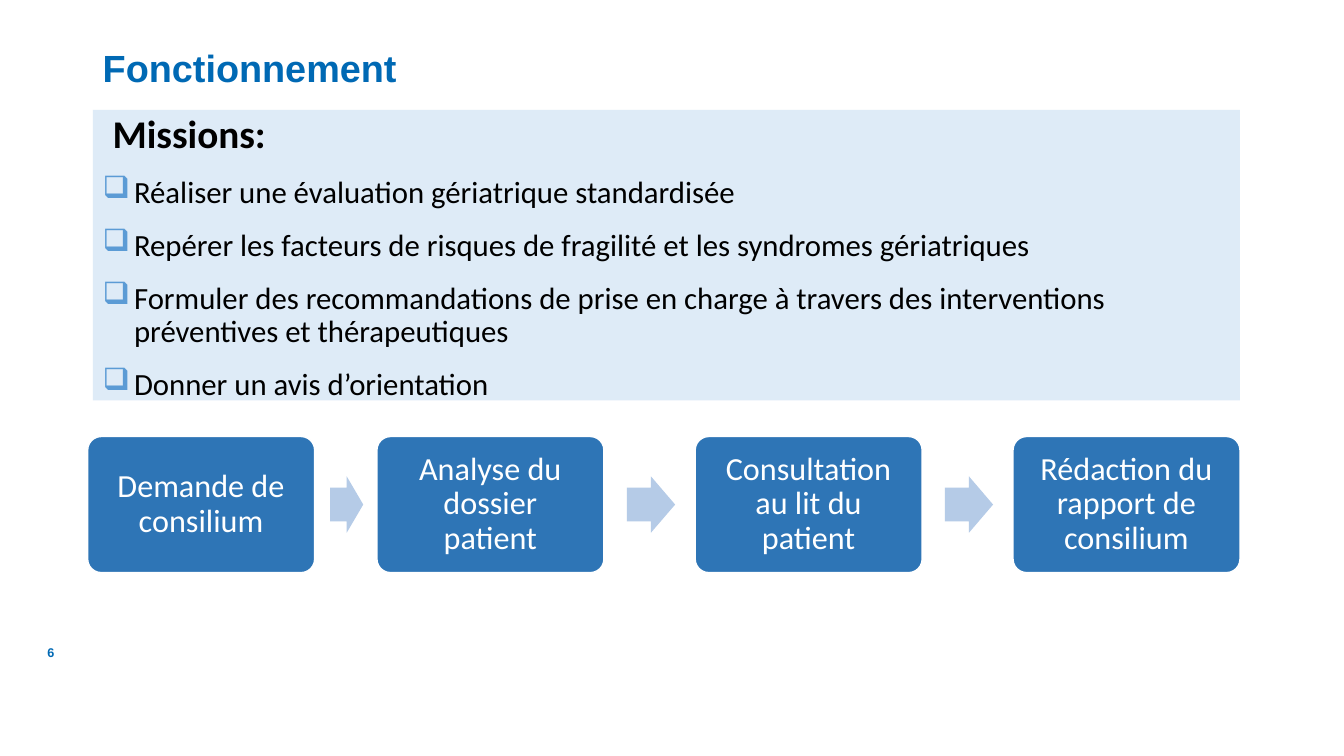
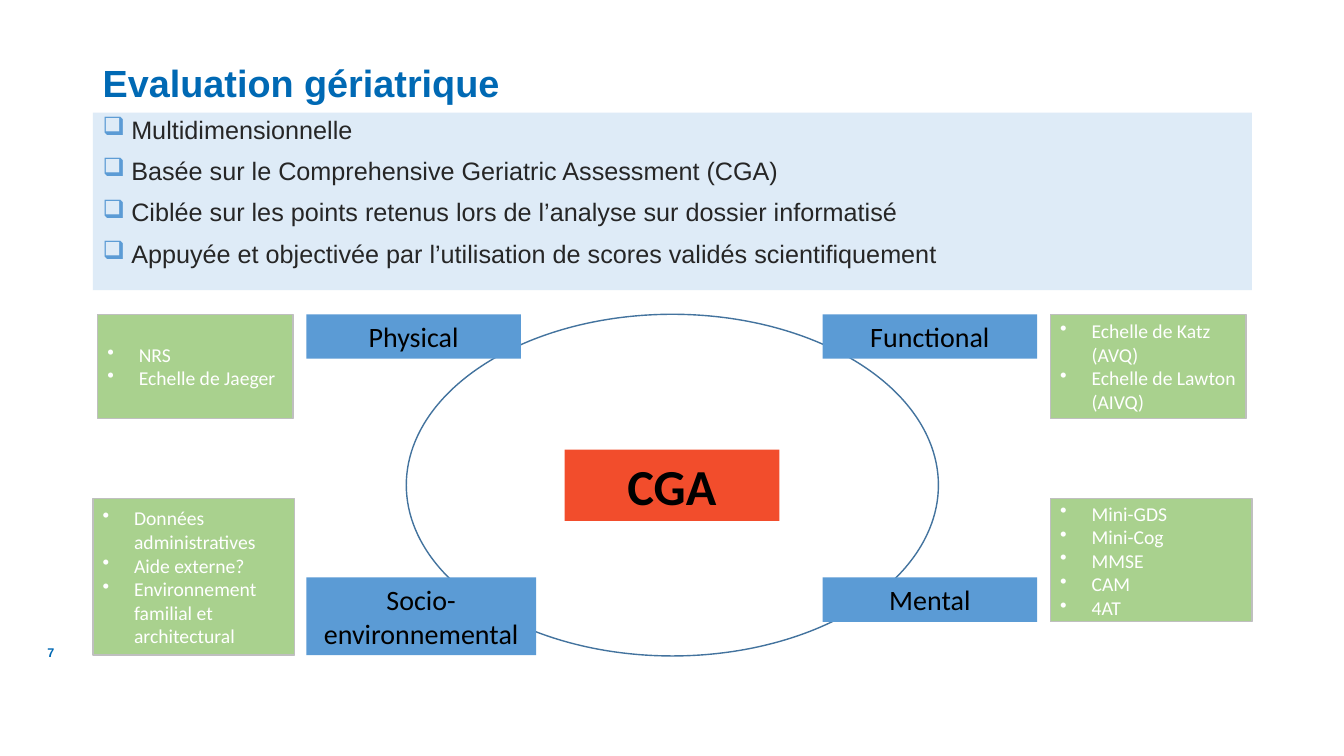
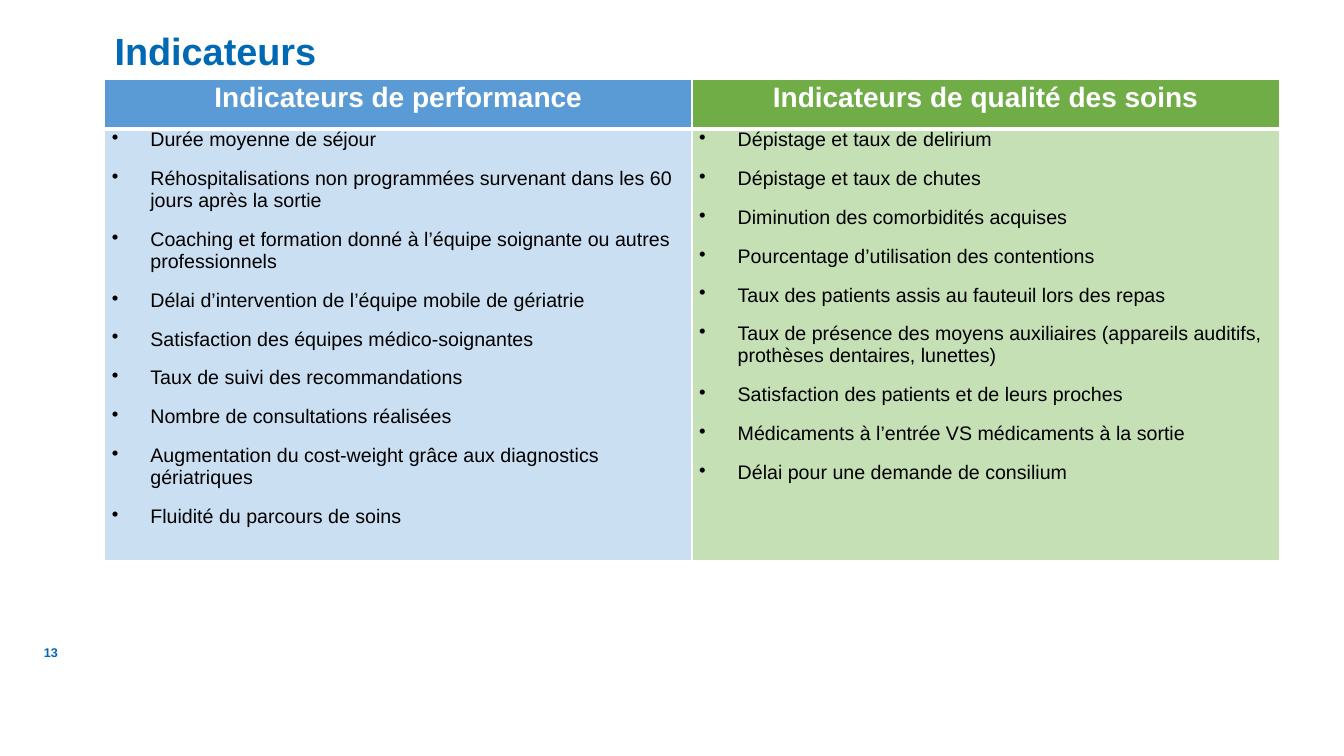
from lxml.etree import SubElement
from pptx import Presentation
from pptx.dml.color import RGBColor
from pptx.enum.shapes import MSO_SHAPE as Shape
from pptx.enum.text import MSO_ANCHOR as Anchor, PP_ALIGN as Align
from pptx.oxml.ns import qn
from pptx.util import Cm, Pt

COLORS = {
    "title": "0069B4", "panel": "DEEBF7", "accent": "5B9BD5",
    "step": "2E75B6", "arrow": "B5CBE7", "ring": "43739E",
    "core": "F24D2C", "scale": "A9D18E", "scale_line": "BFBFBF",
    "quality": "70AD47", "performance_body": "CADFF2", "quality_body": "C5E0B4",
    "text": "262626", "black": "000000", "white": "FFFFFF",
}

# Content: positions and sizes in centimetres
MISSIONS = [
    "Réaliser une évaluation gériatrique standardisée",
    "Repérer les facteurs de risques de fragilité et les syndromes gériatriques",
    "Formuler des recommandations de prise en charge à travers des interventions "
    "préventives et thérapeutiques",
    "Donner un avis d’orientation",
]
STEPS = [  # left, label
    (2.21, "Demande de consilium"),
    (9.5, "Analyse du dossier patient"),
    (17.52, "Consultation au lit du patient"),
    (25.53, "Rédaction du rapport de consilium"),
]
STEP_TOP, STEP_WIDTH, STEP_HEIGHT, ARROW_HEIGHT = 11, 5.72, 3.43, 1.42

ASSESSMENT = [
    "Multidimensionnelle",
    "Basée sur le Comprehensive Geriatric Assessment (CGA)",
    "Ciblée sur les points retenus lors de l’analyse sur dossier informatisé",
    "Appuyée et objectivée par l’utilisation de scores validés scientifiquement",
]
DOMAINS = [  # label, box
    ("Physical", (7.72, 7.92, 5.41, 1.12)),
    ("Socio-environnemental", (7.72, 14.55, 5.79, 1.96)),
    ("Functional", (20.73, 7.92, 5.41, 1.12)),
    ("Mental", (20.73, 14.55, 5.41, 1.12)),
]
SCALES = [  # items, box
    (["Echelle de Katz (AVQ)", "Echelle de Lawton (AIVQ)"], (26.47, 7.92, 4.93, 2.62)),
    (["Mini-GDS", "Mini-Cog", "MMSE", "CAM", "4AT"], (26.47, 12.57, 5.08, 3.1)),
    (["NRS", "Echelle de Jaeger"], (2.46, 7.92, 4.93, 2.62)),
    (["Données administratives", "Aide externe?",
      "Environnement familial et architectural"], (2.34, 12.57, 5.08, 3.94)),
]

INDICATORS = [  # heading, heading fill, body fill, items
    ("Indicateurs de performance", "accent", "performance_body", [
        "Durée moyenne de séjour",
        "Réhospitalisations non programmées survenant dans les 60 jours après la sortie",
        "Coaching et formation donné à l’équipe soignante ou autres professionnels",
        "Délai d’intervention de l’équipe mobile de gériatrie",
        "Satisfaction des équipes médico-soignantes",
        "Taux de suivi des recommandations",
        "Nombre de consultations réalisées",
        "Augmentation du cost-weight grâce aux diagnostics gériatriques",
        "Fluidité du parcours de soins",
    ]),
    ("Indicateurs de qualité des soins", "quality", "quality_body", [
        "Dépistage et taux de delirium",
        "Dépistage et taux de chutes",
        "Diminution des comorbidités acquises",
        "Pourcentage d’utilisation des contentions",
        "Taux des patients assis au fauteuil lors des repas",
        "Taux de présence des moyens auxiliaires (appareils auditifs, "
        "prothèses dentaires, lunettes)",
        "Satisfaction des patients et de leurs proches",
        "Médicaments à l’entrée VS médicaments à la sortie",
        "Délai pour une demande de consilium",
    ]),
]


# Shared helpers
def rgb(name):
    return RGBColor.from_string(COLORS[name])


def indent(paragraph, left, first=0):
    properties = paragraph._p.get_or_add_pPr()
    properties.set("marL", str(Cm(left)))
    properties.set("indent", str(Cm(first)))
    return properties


def add_bullet(paragraph, char, hanging, color):
    properties = indent(paragraph, hanging, -hanging)
    bullet_color = SubElement(properties, qn("a:buClr"))
    SubElement(bullet_color, qn("a:srgbClr"), val=COLORS[color])
    SubElement(properties, qn("a:buChar"), char=char)


def write(frame, lines, size, color, font="Calibri", bold=False, align=Align.LEFT,
          spacing=1.0, before=0, after=0, bullet=None, append=False):
    """Write one paragraph per line; bullet is (char, hanging indent, colour)."""
    frame.word_wrap = True
    for index, line in enumerate(lines):
        first = index == 0 and not append
        paragraph = frame.paragraphs[0] if first else frame.add_paragraph()
        paragraph.text = line
        if bullet:
            add_bullet(paragraph, *bullet)
        paragraph.alignment = align
        paragraph.line_spacing = spacing
        paragraph.space_before = Pt(0 if first else before)
        paragraph.space_after = Pt(after)
        paragraph.font.size = Pt(size)
        paragraph.font.name = font
        paragraph.font.bold = bold
        paragraph.font.color.rgb = rgb(color)


def add_box(slide, kind, box, fill, line=None, anchor=Anchor.MIDDLE):
    shape = slide.shapes.add_shape(kind, *map(Cm, box))
    shape.shadow.inherit = False
    shape.fill.solid()
    shape.fill.fore_color.rgb = rgb(fill)
    if line:
        shape.line.color.rgb = rgb(line)
        shape.line.width = Pt(1)
    else:
        shape.line.fill.background()
    shape.text_frame.vertical_anchor = anchor
    return shape


def add_slide(presentation, title, left, top, number):
    slide = presentation.slides.add_slide(presentation.slide_layouts[6])
    heading = slide.shapes.add_textbox(Cm(left), Cm(top), Cm(29.21), Cm(1.32))
    write(heading.text_frame, [title], 27, "title", "Arial", True, spacing=0.9)
    footer = slide.shapes.add_textbox(Cm(0), Cm(16.05), Cm(2.56), Cm(0.76))
    footer.text_frame.vertical_anchor = Anchor.MIDDLE
    write(footer.text_frame, [str(number)], 9, "title", "Arial", True, Align.CENTER)
    return slide


def set_borders(cell, **widths):
    properties = cell._tc.get_or_add_tcPr()
    for position, (side, width) in enumerate(widths.items()):
        line = SubElement(properties, qn(f"a:ln{side}"), w=str(Pt(width)))
        fill = SubElement(line, qn("a:solidFill"))
        SubElement(fill, qn("a:srgbClr"), val=COLORS["white"])
        properties.insert(position, line)


# Slides
def build_operation(presentation):
    slide = add_slide(presentation, "Fonctionnement", 2.34, 1.12, 6)
    panel = add_box(slide, Shape.RECTANGLE, (2.34, 2.77, 28.91, 7.32), "panel",
                    anchor=Anchor.TOP)
    frame = panel.text_frame
    write(frame, ["Missions:"], 28, "black", bold=True, spacing=0.9, after=2)
    indent(frame.paragraphs[0], 0.25)
    write(frame, MISSIONS, 22, "black", spacing=0.9, before=12, after=2,
          bullet=("❑", 0.79, "accent"), append=True)

    # Process chain, with an arrow in each gap
    for left, label in STEPS:
        step = add_box(slide, Shape.ROUNDED_RECTANGLE,
                       (left, STEP_TOP, STEP_WIDTH, STEP_HEIGHT), "step", "white")
        step.adjustments[0] = 0.1
        step.text_frame.margin_left = step.text_frame.margin_right = Cm(0.35)
        write(step.text_frame, [label], 23, "white", align=Align.CENTER, spacing=0.9)
    arrow_top = STEP_TOP + (STEP_HEIGHT - ARROW_HEIGHT) / 2
    for (left, _), (next_left, _) in zip(STEPS, STEPS[1:]):
        right = left + STEP_WIDTH
        gap = next_left - right
        arrow = add_box(slide, Shape.RIGHT_ARROW,
                        (right + 0.25 * gap, arrow_top, 0.53 * gap, ARROW_HEIGHT), "arrow")
        arrow.adjustments[0] = 0.6
        arrow.adjustments[1] = 0.5


def build_assessment(presentation):
    slide = add_slide(presentation, "Evaluation gériatrique", 2.34, 1.5, 7)
    panel = add_box(slide, Shape.RECTANGLE, (2.34, 2.84, 29.21, 4.47), "panel",
                    anchor=Anchor.TOP)
    write(panel.text_frame, ASSESSMENT, 18, "text", "Arial", spacing=0.9, before=10,
          bullet=("❑", 0.72, "accent"))

    # Domains around the central assessment
    add_box(slide, Shape.OVAL, (10.24, 7.92, 13.41, 8.61), "white", "ring")
    core = add_box(slide, Shape.RECTANGLE, (14.23, 11.33, 5.41, 1.8), "core")
    write(core.text_frame, ["CGA"], 36, "black", bold=True, align=Align.CENTER)
    for label, box in DOMAINS:
        domain = add_box(slide, Shape.RECTANGLE, box, "accent")
        write(domain.text_frame, [label], 20, "black", align=Align.CENTER)
    for items, box in SCALES:
        scale = add_box(slide, Shape.RECTANGLE, box, "scale", "scale_line")
        write(scale.text_frame, items, 14, "white", bullet=("•", 0.79, "white"))


def build_indicators(presentation):
    slide = add_slide(presentation, "Indicateurs", 2.64, 0.71, 13)
    table = slide.shapes.add_table(2, 2, Cm(2.64), Cm(2.01), Cm(29.6), Cm(12.11)).table
    table.rows[0].height, table.rows[1].height = Cm(1.24), Cm(10.87)
    for column, (heading, head_fill, body_fill, items) in enumerate(INDICATORS):
        table.columns[column].width = Cm(14.8)
        head, body = table.cell(0, column), table.cell(1, column)
        for cell, fill in ((head, head_fill), (body, body_fill)):
            cell.fill.solid()
            cell.fill.fore_color.rgb = rgb(fill)
            cell.margin_left = cell.margin_right = Cm(0.18)
            cell.margin_top = cell.margin_bottom = Cm(0)
        set_borders(head, L=1, R=1, T=1, B=3)
        set_borders(body, L=1, R=1, T=3, B=1)
        write(head.text_frame, [heading], 20, "white", "Arial", True, Align.CENTER,
              spacing=1.07)
        write(body.text_frame, items, 14, "black", "Arial", after=12,
              bullet=("•", 0.97, "black"))


def main():
    presentation = Presentation()
    presentation.slide_width, presentation.slide_height = Cm(33.87), Cm(19.05)
    build_operation(presentation)
    build_assessment(presentation)
    build_indicators(presentation)
    presentation.save("out.pptx")


if __name__ == "__main__":
    main()
